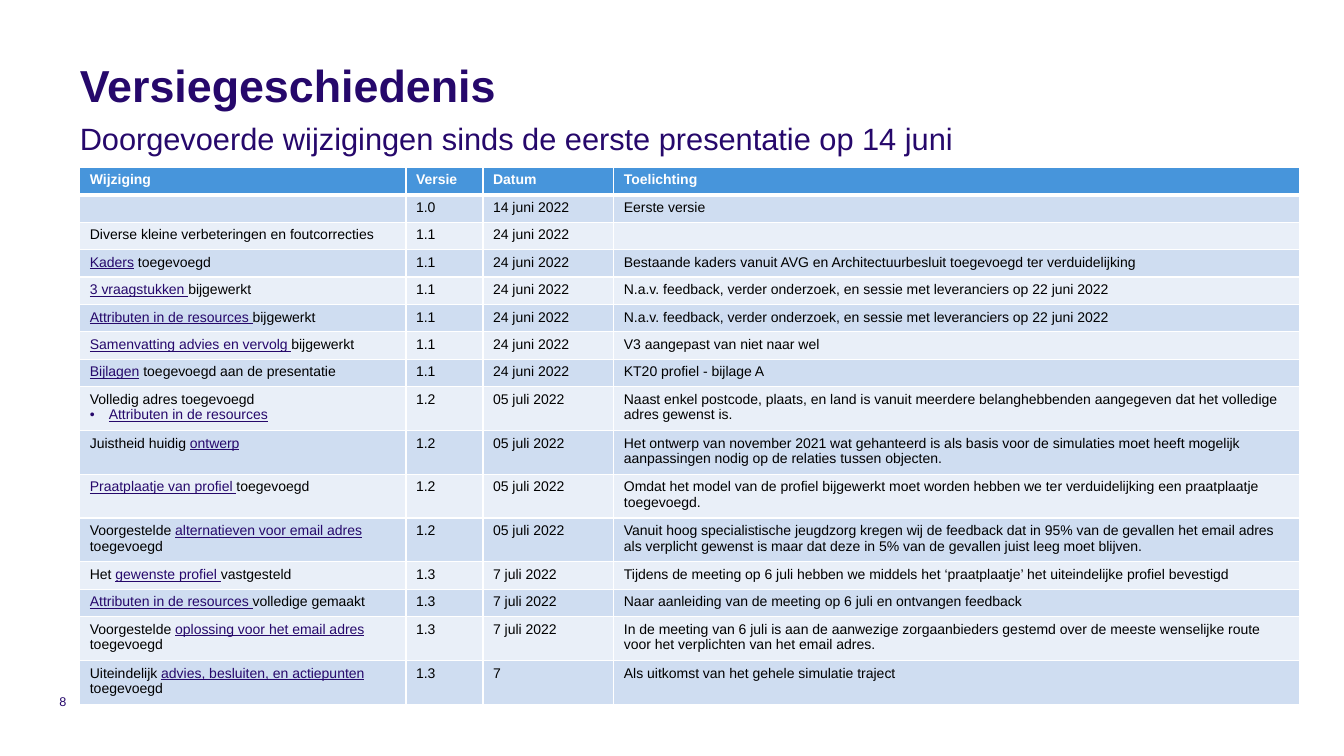
"""Build the version history slide with its table of changes."""
from dataclasses import dataclass

from lxml.etree import SubElement as Sub
from pptx import Presentation as Deck
from pptx.dml.color import RGBColor as Rgb
from pptx.oxml.ns import qn
from pptx.util import Pt


@dataclass(frozen=True)
class Theme:
    font: str = "Arial"
    ink: str = "26086B"
    text: str = "000000"
    white: str = "FFFFFF"
    head: str = "4795DB"
    bands: tuple = ("E9EFF8", "CFDDF1")
    title: int = 32
    sub: int = 22
    cell: int = 10
    page: int = 9


class Maker:
    def __init__(self, slide, theme):
        self.slide, self.theme = slide, theme

    def style(self, font, size, color, bold=False):
        font.name, font.size, font.bold = self.theme.font, Pt(size), bold
        font.color.rgb = Rgb.from_string(color)

    def label(self, text, box, size, line=None):
        frame = self.slide.shapes.add_textbox(*map(Pt, box)).text_frame
        frame.word_wrap = True
        frame.margin_left = frame.margin_right = 0
        frame.margin_top = frame.margin_bottom = 0
        par = frame.paragraphs[0]
        par.text = text
        if line:
            par.line_spacing = Pt(line)
        self.style(par.font, size, self.theme.ink)
        return par

    def border(self, cell, top, bottom):
        props = cell._tc.get_or_add_tcPr()
        for side, width in zip("LRTB", (1, 1, top, bottom)):
            line = Sub(props, qn(f"a:ln{side}"), w=str(Pt(width)))
            Sub(Sub(line, qn("a:solidFill")), qn("a:srgbClr"), val=self.theme.white)

    def bullet(self, par):
        props = par._p.get_or_add_pPr()
        props.set("marL", str(Pt(13.5)))
        props.set("indent", str(-Pt(13.5)))
        Sub(props, qn("a:buFont"), typeface=self.theme.font)
        Sub(props, qn("a:buChar"), char="•")

    def phrase(self, par, text, color, bold):
        parts = text.split("|")
        plain = len(parts) == 1
        for i, part in enumerate(parts):
            if part:
                run = par.add_run()
                run.text = part
                if not plain:
                    link = i % 2 == 1
                    run.font.underline = link
                    tint = self.theme.ink if link else color
                    run.font.color.rgb = Rgb.from_string(tint)
        self.style(par.font, self.theme.cell, color, bold)
        if not text:
            Sub(par._p, qn("a:endParaRPr"), sz=str(self.theme.cell * 100))

    def fill(self, cell, text, row):
        look, head = self.theme, row == 0
        self.border(cell, 3 if row == 1 else 1, 3 if head else 1)
        cell.fill.solid()
        back = look.head if head else look.bands[row % 2]
        cell.fill.fore_color.rgb = Rgb.from_string(back)
        frame = cell.text_frame
        for i, line in enumerate(text.split("\n")):
            par = frame.add_paragraph() if i else frame.paragraphs[0]
            if i:
                self.bullet(par)
            self.phrase(par, line, look.white if head else look.text, head)

    def table(self, rows, left, top, widths, height):
        box = map(Pt, (left, top, sum(widths), height * len(rows)))
        grid = self.slide.shapes.add_table(len(rows), len(widths), *box).table
        for col, width in zip(grid.columns, widths):
            col.width = Pt(width)
        for r, row in enumerate(rows):
            grid.rows[r].height = Pt(height)
            for c, text in enumerate(row):
                self.fill(grid.cell(r, c), text, r)


FEEDBACK = "N.a.v. feedback, verder onderzoek, en sessie met leveranciers op 22 juni 2022"
ROWS = [
    ("Wijziging", "Versie", "Datum", "Toelichting"),
    ("", "1.0", "14 juni 2022", "Eerste versie"),
    ("Diverse kleine verbeteringen en foutcorrecties", "1.1", "24 juni 2022", ""),
    ("|Kaders| toegevoegd", "1.1", "24 juni 2022",
     "Bestaande kaders vanuit AVG en Architectuurbesluit toegevoegd ter verduidelijking"),
    ("|3 vraagstukken |bijgewerkt", "1.1", "24 juni 2022", FEEDBACK),
    ("|Attributen in de resources |bijgewerkt", "1.1", "24 juni 2022", FEEDBACK),
    ("|Samenvatting advies en vervolg |bijgewerkt", "1.1", "24 juni 2022",
     "V3 aangepast van niet naar wel"),
    ("|Bijlagen| toegevoegd aan de presentatie", "1.1", "24 juni 2022",
     "KT20 profiel - bijlage A"),
    ("Volledig adres toegevoegd\n|Attributen in de resources|", "1.2", "05 juli 2022",
     "Naast enkel postcode, plaats, en land is vanuit meerdere belanghebbenden "
     "aangegeven dat het volledige adres gewenst is."),
    ("Juistheid huidig |ontwerp|", "1.2", "05 juli 2022",
     "Het ontwerp van november 2021 wat gehanteerd is als basis voor de simulaties "
     "moet heeft mogelijk aanpassingen nodig op de relaties tussen objecten."),
    ("|Praatplaatje van profiel |toegevoegd", "1.2", "05 juli 2022",
     "Omdat het model van de profiel bijgewerkt moet worden hebben we ter "
     "verduidelijking een praatplaatje toegevoegd."),
    ("Voorgestelde |alternatieven voor email adres |toegevoegd", "1.2", "05 juli 2022",
     "Vanuit hoog specialistische jeugdzorg kregen wij de feedback dat in 95% van de "
     "gevallen het email adres als verplicht gewenst is maar dat deze in 5% van de "
     "gevallen juist leeg moet blijven."),
    ("Het |gewenste profiel |vastgesteld", "1.3", "7 juli 2022",
     "Tijdens de meeting op 6 juli hebben we middels het ‘praatplaatje’ het "
     "uiteindelijke profiel bevestigd"),
    ("|Attributen in de resources |volledige gemaakt", "1.3", "7 juli 2022",
     "Naar aanleiding van de meeting op 6 juli en ontvangen feedback"),
    ("Voorgestelde |oplossing voor het email adres |toegevoegd", "1.3", "7 juli 2022",
     "In de meeting van 6 juli is aan de aanwezige zorgaanbieders gestemd over de "
     "meeste wenselijke route voor het verplichten van het email adres."),
    ("Uiteindelijk |advies, besluiten, en actiepunten |toegevoegd", "1.3", "7",
     "Als uitkomst van het gehele simulatie traject"),
]


def main():
    deck = Deck()
    deck.slide_width, deck.slide_height = Pt(960), Pt(540)
    theme = Theme()
    make = Maker(deck.slides.add_slide(deck.slide_layouts[6]), theme)
    title = make.label("Versiegeschiedenis", (57, 44, 847, 36), theme.title, 36)
    title.font.bold = True
    make.label("Doorgevoerde wijzigingen sinds de eerste presentatie op 14 juni",
               (57, 88, 847, 24), theme.sub, 24)
    make.label("8", (42.5, 495.5, 14.5, 11), theme.page)
    make.table(ROWS, 57, 119.5, (233, 55, 93.5, 489.5), 19.6)
    deck.save("out.pptx")


if __name__ == "__main__":
    main()
